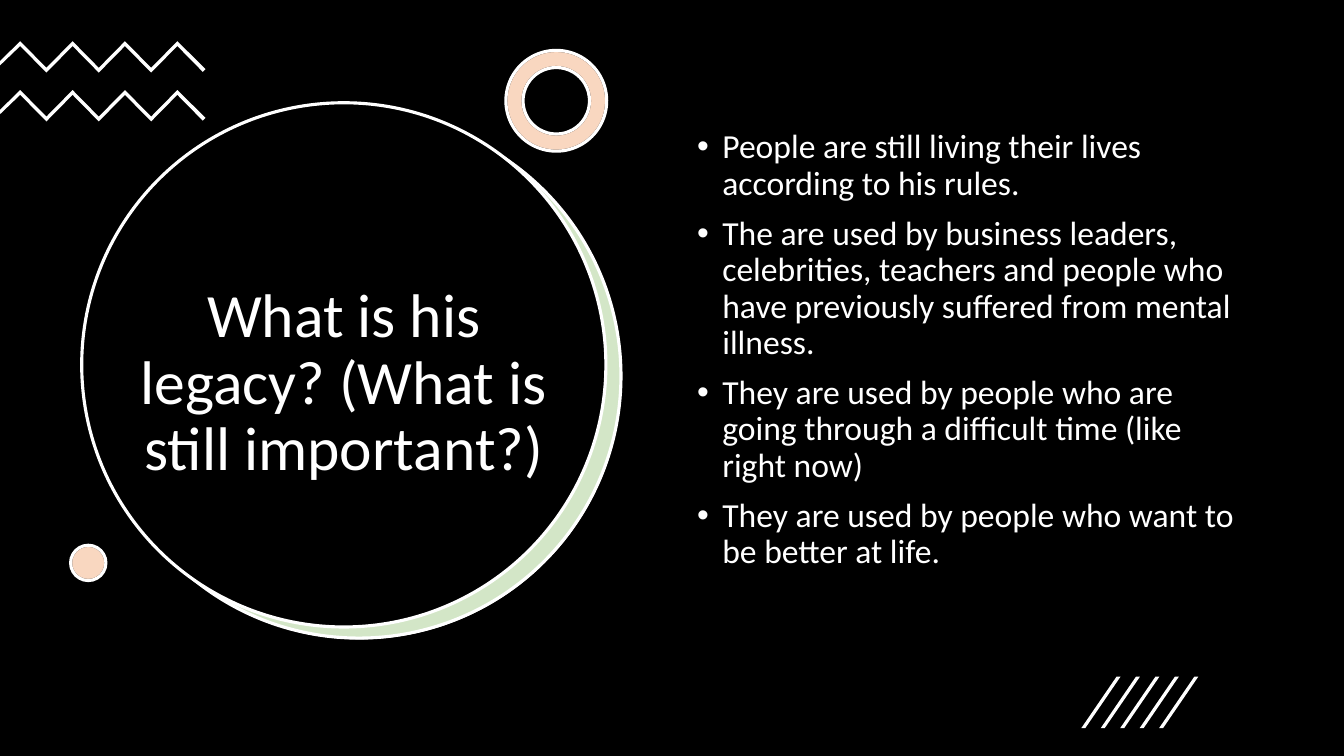
import dataclasses

import lxml.etree
import pptx
import pptx.dml.color
import pptx.enum.shapes
import pptx.enum.text
import pptx.oxml.ns
import pptx.util

Cm = pptx.util.Cm
Pt = pptx.util.Pt
Shape = pptx.enum.shapes.MSO_SHAPE
Align = pptx.enum.text.PP_ALIGN
Anchor = pptx.enum.text.MSO_ANCHOR
qn = pptx.oxml.ns.qn


@dataclasses.dataclass(frozen=True)
class Theme:
    font: str = "Calibri"
    black: str = "000000"
    white: str = "FFFFFF"
    green: str = "70AD47"
    orange: str = "ED7D31"
    tint: int = 30
    title_size: float = 44
    body_size: float = 24
    outline: float = 2.25
    line_spacing: float = 0.9
    space_before: float = 10


class SlideBuilder:
    def __init__(self, slide, theme):
        self.slide = slide
        self.theme = theme

    def paint(self, shape, fill, line=None, opacity=100):
        shape.shadow.inherit = False
        shape.fill.solid()
        shape.fill.fore_color.rgb = pptx.dml.color.RGBColor.from_string(fill)
        if opacity < 100:
            color = shape.fill._xPr.find(f".//{qn('a:srgbClr')}")
            lxml.etree.SubElement(color, qn("a:alpha"), val=str(opacity * 1000))
        if line:
            shape.line.color.rgb = pptx.dml.color.RGBColor.from_string(line)
            shape.line.width = Pt(self.theme.outline)
        else:
            shape.line.fill.background()

    def preset(self, kind, left, top, width, height, fill, line=None, opacity=100):
        shape = self.slide.shapes.add_shape(kind, Cm(left), Cm(top), Cm(width), Cm(height))
        self.paint(shape, fill, line, opacity)
        return shape

    def tinted(self, kind, left, top, size, color, thickness=None):
        theme = self.theme
        layers = ((theme.white, theme.black, 100), (color, theme.white, theme.tint))
        for fill, line, opacity in layers:
            shape = self.preset(kind, left, top, size, size, fill, line, opacity)
            if thickness:
                shape.adjustments[0] = thickness

    def polygon(self, points):
        corners = [(Cm(x), Cm(y)) for x, y in points]
        builder = self.slide.shapes.build_freeform(*corners[0])
        builder.add_line_segments(corners[1:], close=True)
        self.paint(builder.convert_to_shape(), self.theme.white)

    def text(self, left, top, width, height, content, size, align, anchor):
        box = self.slide.shapes.add_textbox(Cm(left), Cm(top), Cm(width), Cm(height))
        frame = box.text_frame
        frame.word_wrap = True
        frame.vertical_anchor = anchor
        frame.text = content
        for paragraph in frame.paragraphs:
            paragraph.alignment = align
            paragraph.line_spacing = self.theme.line_spacing
            for run in paragraph.runs:
                run.font.name = self.theme.font
                run.font.size = Pt(size)
                run.font.color.rgb = pptx.dml.color.RGBColor.from_string(self.theme.white)
        return frame

    def bullets(self, left, top, width, height, items):
        frame = self.text(left, top, width, height, "\n".join(items),
                          self.theme.body_size, Align.LEFT, Anchor.TOP)
        indent = Cm(0.635)
        for paragraph in frame.paragraphs:
            paragraph.space_before = Pt(self.theme.space_before)
            properties = paragraph._p.get_or_add_pPr()
            properties.set("marL", str(indent))
            properties.set("indent", str(-indent))
            lxml.etree.SubElement(properties, qn("a:buFont"), typeface="Arial")
            lxml.etree.SubElement(properties, qn("a:buChar"), char="•")

    def zigzag(self, top):
        first_peak, step, depth, thickness = 0.51, 0.66, 0.67, 0.12
        ridge = [(first_peak + step * i, top + depth * (i % 2)) for i in range(7)]
        underside = [(x, y + thickness) for x, y in reversed(ridge)]
        tip = [(5.18, top + 0.7), (5.11, top + 0.77)]
        edge = [(0, top + 0.61), (0, top + 0.5)]
        self.polygon(ridge + tip + underside + edge)

    def slash(self, left):
        top, bottom, slant, thickness = 17.05, 18.35, 0.89, 0.1
        self.polygon([(left + thickness, bottom), (left, bottom),
                      (left + slant, top), (left + slant + thickness, top)])


def main():
    deck = pptx.Presentation()
    deck.slide_width, deck.slide_height = Cm(33.87), Cm(19.05)
    theme = Theme()
    builder = SlideBuilder(deck.slides.add_slide(deck.slide_layouts[6]), theme)

    builder.preset(Shape.RECTANGLE, 0, 0, 33.87, 19.05, theme.black)

    diameter = 13.21
    builder.preset(Shape.OVAL, 2.46, 2.9, diameter, diameter, theme.white)
    builder.preset(Shape.OVAL, 2.44, 2.87, diameter, diameter,
                   theme.green, theme.white, theme.tint)
    builder.preset(Shape.OVAL, 2.06, 2.59, diameter, diameter, theme.black, theme.white)
    builder.text(3.07, 5.21, 11.2, 8.94, "What is his legacy? (What is still important?)",
                 theme.title_size, Align.CENTER, Anchor.MIDDLE)

    for top in (1.04, 2.27):
        builder.zigzag(top)
    builder.tinted(Shape.DONUT, 12.75, 1.27, 2.54, theme.orange, thickness=0.17)
    builder.tinted(Shape.OVAL, 1.78, 13.74, 0.89, theme.orange)

    builder.bullets(17.32, 3.15, 14.5, 12.09, [
        "People are still living their lives according to his rules.",
        "The are used by business leaders, celebrities, teachers and people who "
        "have previously suffered from mental illness.",
        "They are used by people who are going through a difficult time (like right now)",
        "They are used by people who want to be better at life.",
    ])

    for index in range(5):
        builder.slash(27.25 + 0.49 * index)

    deck.save("out.pptx")


if __name__ == "__main__":
    main()
